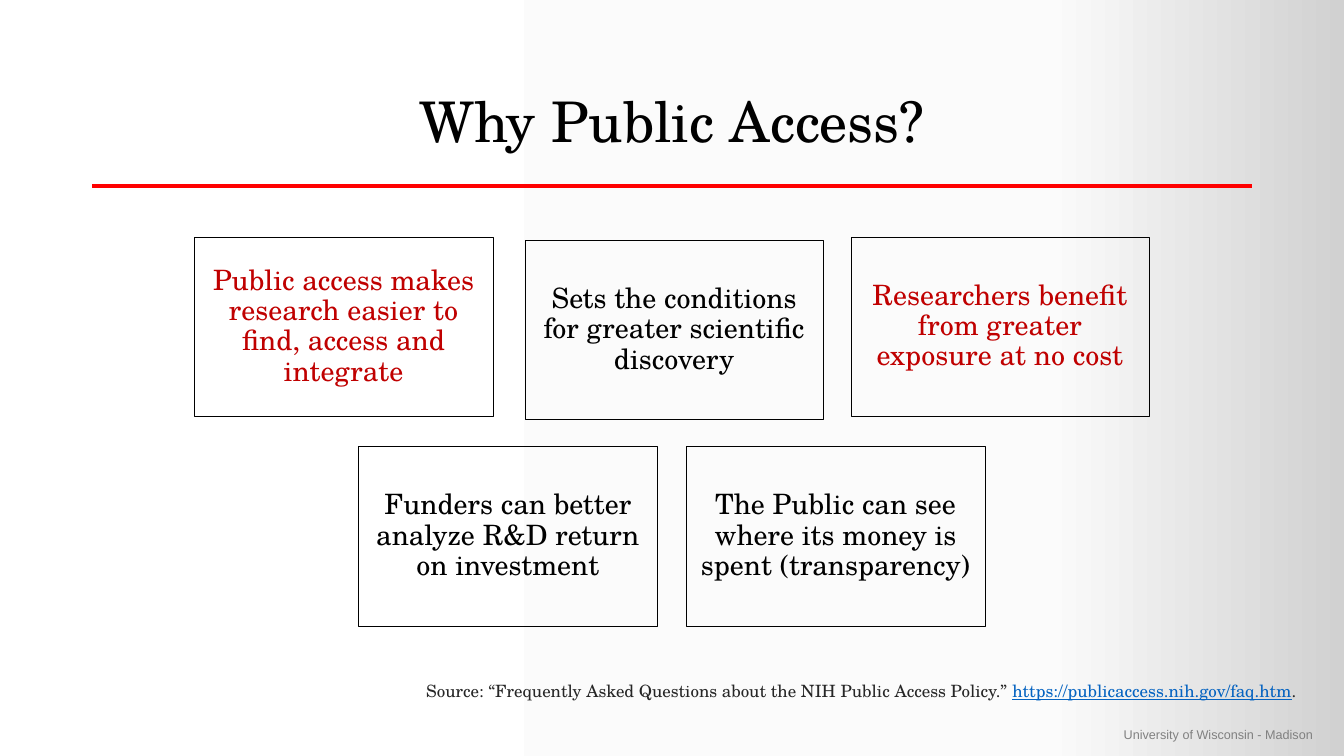
import copy

import pptx
import pptx.dml.color
import pptx.enum.shapes
import pptx.enum.text
import pptx.oxml.ns
import pptx.util

Cm = pptx.util.Cm
Pt = pptx.util.Pt
ALIGN = pptx.enum.text.PP_ALIGN
ANCHOR = pptx.enum.text.MSO_ANCHOR
SERIF = "TeX Gyre Schola"
BLACK, CRIMSON, RED = "000000", "C00000", "FF0000"
INK, LINK, GREY = "262626", "0563C1", "808080"

CARD_WIDTH, CARD_HEIGHT = 7.52, 4.52
CARDS = [
    (4.9, 5.97, CRIMSON, "Public access makes research easier to find, access and integrate"),
    (13.23, 6.05, BLACK, "Sets the conditions for greater scientific discovery"),
    (21.44, 5.97, CRIMSON, "Researchers benefit from greater exposure at no cost"),
    (9.04, 11.25, BLACK, "Funders can better analyze R&D return on investment"),
    (17.3, 11.25, BLACK, "The Public can see where its money is spent (transparency)"),
]


def colour(value):
    return pptx.dml.color.RGBColor.from_string(value)


def write(para, text, size=20, color=BLACK, font=SERIF, underline=False):
    span = para.add_run()
    span.text = text
    span.font.size = Pt(size)
    span.font.name = font
    span.font.color.rgb = colour(color)
    span.font.underline = underline


class Page:
    """Holds the style and the current slide, and adds each kind of element."""

    def __init__(self, deck):
        self.slide = deck.slides.add_slide(deck.slide_layouts[5])
        self.shapes = self.slide.shapes

    def background(self, stops):
        fill = self.slide.background.fill
        fill.gradient()
        fill.gradient_angle = 0
        stop_list = next(self.slide.element.iter(pptx.oxml.ns.qn("a:gsLst")))
        while len(stop_list) < len(stops):
            stop_list.append(copy.deepcopy(stop_list[-1]))
        for stop, (position, color) in zip(fill.gradient_stops, stops):
            stop.position = position
            stop.color.rgb = colour(color)

    def centre(self, frame, text, **style):
        frame.word_wrap = True
        frame.vertical_anchor = ANCHOR.MIDDLE
        para = frame.paragraphs[0]
        para.alignment = ALIGN.CENTER
        para.line_spacing = 0.9
        write(para, text, **style)

    def title(self, text, left, top, width, height):
        box = self.shapes.title
        box.left, box.top, box.width, box.height = map(Cm, (left, top, width, height))
        self.centre(box.text_frame, text, size=40)

    def rule(self, left, top, width):
        line = self.shapes.add_connector(
            pptx.enum.shapes.MSO_CONNECTOR.STRAIGHT,
            Cm(left), Cm(top), Cm(left + width), Cm(top))
        line.line.color.rgb = colour(RED)
        line.line.width = Pt(3)
        properties = line._element.spPr
        properties.append(properties.makeelement(pptx.oxml.ns.qn("a:effectLst"), {}))

    def card(self, left, top, color, text):
        box = self.shapes.add_shape(
            pptx.enum.shapes.MSO_SHAPE.RECTANGLE,
            Cm(left), Cm(top), Cm(CARD_WIDTH), Cm(CARD_HEIGHT))
        box.shadow.inherit = False
        box.fill.background()
        box.line.color.rgb = colour(BLACK)
        box.line.width = Pt(0.25)
        frame = box.text_frame
        frame.margin_left = frame.margin_right = Cm(0.2)
        frame.margin_top = frame.margin_bottom = Cm(0.2)
        self.centre(frame, text, color=color)

    def note(self, left, top, width, height, spans):
        box = self.shapes.add_textbox(Cm(left), Cm(top), Cm(width), Cm(height))
        box.text_frame.word_wrap = True
        for text, style in spans:
            write(box.text_frame.paragraphs[0], text, **style)


def main():
    deck = pptx.Presentation()
    deck.slide_width, deck.slide_height = Cm(33.87), Cm(19.05)
    page = Page(deck)
    page.background([(0, "FFFFFF"), (0.78, "FBFBFB"), (1, "D1D1D1")])
    page.note(28.07, 18.19, 5.7, 0.64, [
        ("University of Wisconsin - Madison", dict(size=9, color=GREY, font="Arial"))])
    page.rule(2.33, 4.69, 29.21)
    page.title("Why Public Access?", 2.33, 1.57, 29.21, 3.15)
    for card in CARDS:
        page.card(*card)
    page.note(10.49, 17.02, 23.37, 1.32, [
        ("Source: “Frequently Asked Questions about the NIH Public Access Policy.” ",
         dict(size=12.1, color=INK)),
        ("https://publicaccess.nih.gov/faq.htm",
         dict(size=12.1, color=LINK, underline=True)),
        (".", dict(size=12.1, color=INK))])
    deck.save("out.pptx")


if __name__ == "__main__":
    main()
